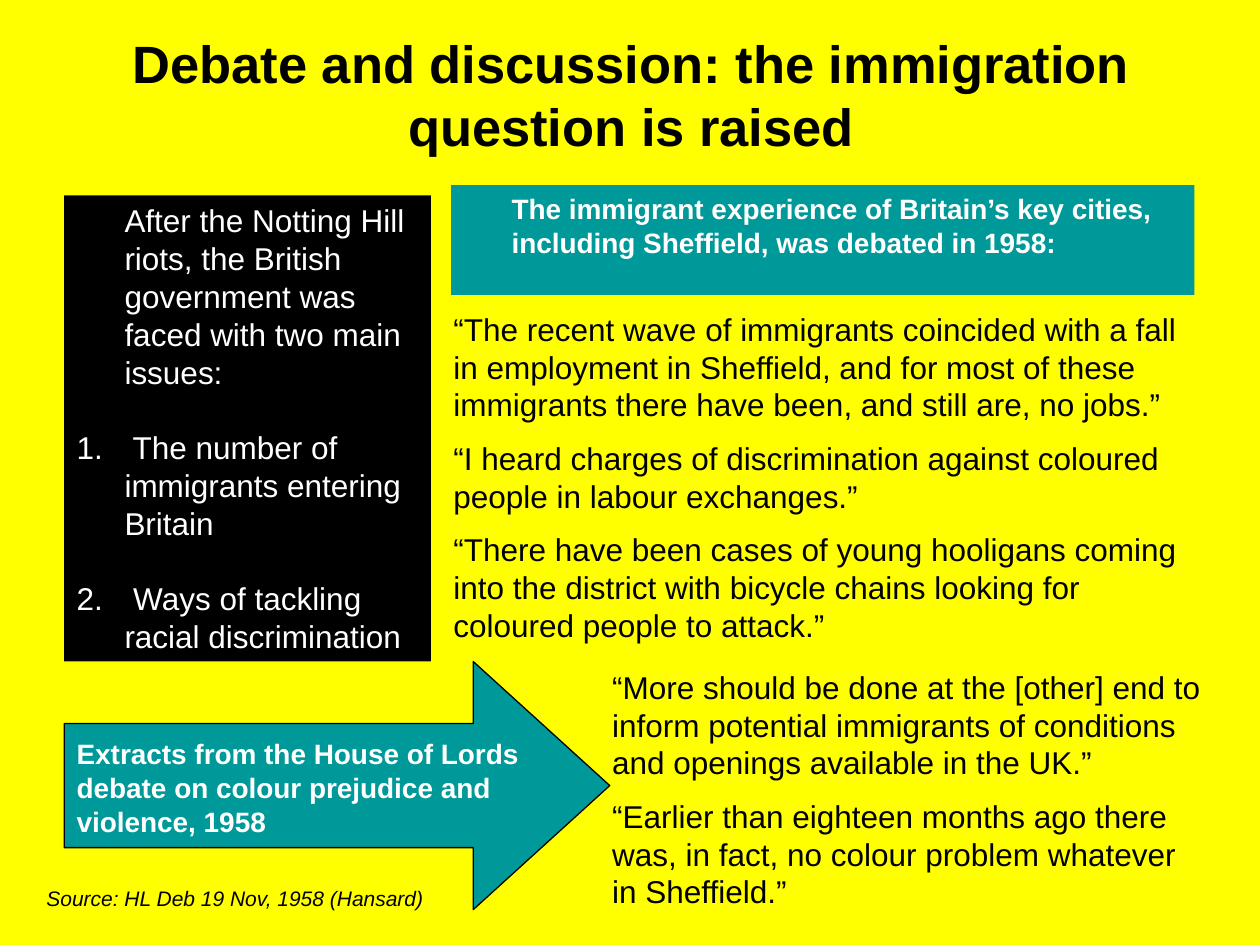
"""Build a slide on the 1958 debate about immigration to Britain."""
from dataclasses import dataclass

from lxml import etree
from pptx import Presentation
from pptx.dml.color import RGBColor
from pptx.enum.shapes import MSO_SHAPE
from pptx.enum.text import MSO_ANCHOR, PP_ALIGN
from pptx.oxml.ns import qn
from pptx.util import Inches, Pt

TITLE = "Debate and discussion: the immigration question is raised"
BANNER = "The immigrant experience of Britain’s key cities, including Sheffield, was debated in 1958:"
ISSUES_INTRO = "After the Notting Hill riots, the British government was faced with two main issues:"
ISSUES = [" The number of immigrants entering Britain", " Ways of tackling racial discrimination"]
SHEFFIELD_QUOTES = [
    "“The recent wave of immigrants coincided with a fall in employment in Sheffield, "
    "and for most of these immigrants there have been, and still are, no jobs.”",
    "“I heard charges of discrimination against coloured people in labour exchanges.”",
    "“There have been cases of young hooligans coming into the district with bicycle chains "
    "looking for coloured people to attack.”",
]
POLICY_QUOTES = [
    "“More should be done at the [other] end to inform potential immigrants of conditions "
    "and openings available in the UK.”",
    "“Earlier than eighteen months ago there was, in fact, no colour problem whatever in Sheffield.”",
]
ARROW_LABEL = "Extracts from the House of Lords debate on colour prejudice and violence, 1958"
SOURCE = "Source: HL Deb 19 Nov, 1958 (Hansard)"


@dataclass(frozen=True)
class Theme:
    font: str = "Arial"
    paper: RGBColor = RGBColor(0xFF, 0xFF, 0x00)
    ink: RGBColor = RGBColor(0x00, 0x00, 0x00)
    light: RGBColor = RGBColor(0xFF, 0xFF, 0xFF)
    teal: RGBColor = RGBColor(0x00, 0x99, 0x99)
    title: int = 30
    text: int = 18
    label: int = 16
    source: int = 12
    quote_gap: int = 9
    issue_gap: float = 21.6


THEME = Theme()
LEFT = 0.51
HANG = 0.38


def place(shape, left, top, width, height):
    shape.left, shape.top = Inches(left), Inches(top)
    shape.width, shape.height = Inches(width), Inches(height)


def fill(shape, color):
    shape.fill.solid()
    shape.fill.fore_color.rgb = color


def write(shape, texts, size, color, gap=0, bold=False, italic=False,
          align=PP_ALIGN.LEFT, anchor=MSO_ANCHOR.TOP):
    frame = shape.text_frame
    frame.text = "\n".join(texts)
    frame.word_wrap = True
    frame.vertical_anchor = anchor
    for index, paragraph in enumerate(frame.paragraphs):
        paragraph.alignment = align
        paragraph.space_before = Pt(gap if index else 0)
        for run in paragraph.runs:
            font = run.font
            font.name, font.size = THEME.font, Pt(size)
            font.bold, font.italic = bold, italic
            font.color.rgb = color
    return frame.paragraphs


def indent(paragraph, numbered=False):
    properties = paragraph._p.get_or_add_pPr()
    properties.set("marL", str(Inches(HANG)))
    properties.set("indent", str(-Inches(HANG) if numbered else 0))
    if numbered:
        etree.SubElement(properties, qn("a:buFont"), typeface=THEME.font)
        etree.SubElement(properties, qn("a:buAutoNum"), type="arabicPeriod")
    else:
        etree.SubElement(properties, qn("a:buNone"))


def add_text(slide, box, texts, size, color, **style):
    shape = slide.shapes.add_textbox(*map(Inches, box))
    write(shape, texts, size, color, **style)


def add_panel(slide, kind, box, color):
    panel = slide.shapes.add_shape(kind, *map(Inches, box))
    panel.shadow.inherit = False
    fill(panel, color)
    return panel


def main():
    deck = Presentation()
    deck.slide_width, deck.slide_height = Inches(10), Inches(7.5)
    slide = deck.slides.add_slide(deck.slide_layouts[1])
    slide.background.fill.solid()
    slide.background.fill.fore_color.rgb = THEME.paper

    title, banner = slide.placeholders
    place(title, LEFT, 0.21, 9, 1.07)
    write(title, [TITLE], THEME.title, THEME.ink, bold=True,
          align=PP_ALIGN.CENTER, anchor=MSO_ANCHOR.MIDDLE)

    place(banner, 3.58, 1.47, 5.9, 0.87)
    fill(banner, THEME.teal)
    indent(write(banner, [BANNER], THEME.label, THEME.light, bold=True)[0])

    issues = add_panel(slide, MSO_SHAPE.RECTANGLE, (LEFT, 1.55, 2.91, 3.7), THEME.ink)
    issues.line.fill.background()
    paragraphs = write(issues, [ISSUES_INTRO, *ISSUES], THEME.text, THEME.light, gap=THEME.issue_gap)
    for index, paragraph in enumerate(paragraphs):
        indent(paragraph, numbered=index > 0)

    arrow = add_panel(slide, MSO_SHAPE.RIGHT_ARROW, (LEFT, 5.25, 4.33, 1.97), THEME.teal)
    arrow.adjustments[0], arrow.adjustments[1] = 0.5, 0.55
    arrow.line.color.rgb = THEME.ink
    arrow.line.width = Pt(0.75)
    add_text(slide, (LEFT, 5.8, 3.94, 0.9), [ARROW_LABEL], THEME.label, THEME.light, bold=True)

    for box, quotes in [((3.5, 2.41, 6.06, 2.81), SHEFFIELD_QUOTES),
                        ((4.76, 5.25, 4.88, 2.05), POLICY_QUOTES)]:
        add_text(slide, box, quotes, THEME.text, THEME.ink, gap=THEME.quote_gap)

    add_text(slide, (0.27, 6.98, 3.23, 0.3), [SOURCE], THEME.source, THEME.ink, italic=True)
    deck.save("out.pptx")


if __name__ == "__main__":
    main()
